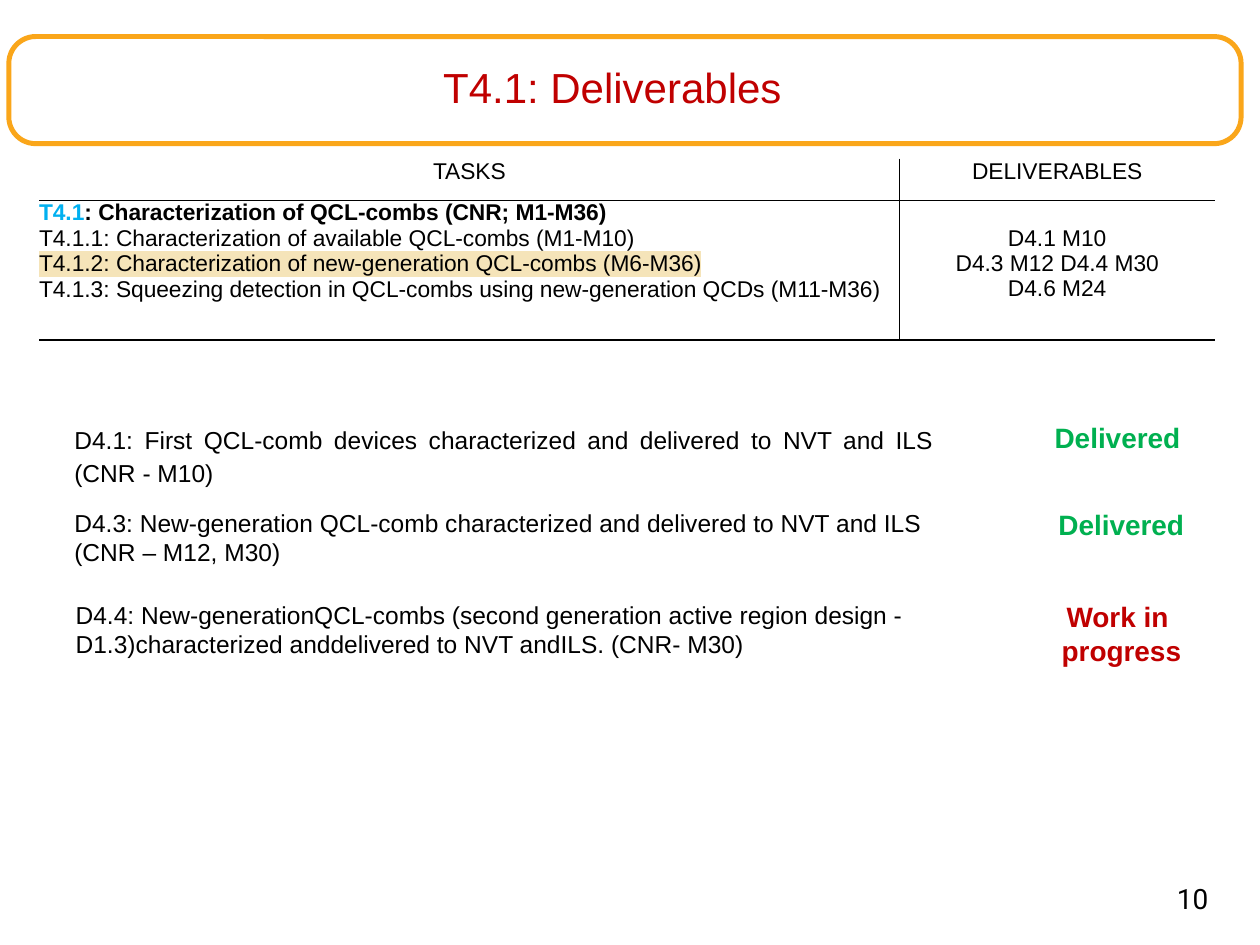
import pptx
import pptx.util
import pptx.dml.color
import pptx.enum.shapes
import pptx.enum.text
import pptx.oxml.ns
from lxml import etree

Inches, Pt = pptx.util.Inches, pptx.util.Pt
RGB = pptx.dml.color.RGBColor
ALIGN = pptx.enum.text.PP_ALIGN
qn = pptx.oxml.ns.qn

BLACK = RGB(0x00, 0x00, 0x00)
RED = RGB(0xC0, 0x00, 0x00)
GREEN = RGB(0x00, 0xB0, 0x50)
BLUE = RGB(0x00, 0xB0, 0xF0)
ORANGE = RGB(0xFA, 0xA6, 0x1A)
SAND = RGB(0xF5, 0xE4, 0xB9)

TITLE = "T4.1: Deliverables"
NUMBER = "10"
HEADS = ["TASKS", "DELIVERABLES"]
TASKS = [
    "T4.1: Characterization of QCL-combs (CNR; M1-M36)",
    "T4.1.1: Characterization of available QCL-combs (M1-M10)",
    "T4.1.2: Characterization of new-generation QCL-combs (M6-M36)",
    "T4.1.3: Squeezing detection in QCL-combs using new-generation QCDs (M11-M36)",
]
DUE = ["D4.1 M10", "D4.3 M12 D4.4 M30", "D4.6 M24"]
COLS = [6.83, 2.5]
ROWS = [0.33, 1.11]
ITEMS = [
    (0.54, 3.29, 0.61, "D4.1: First QCL-comb devices characterized and delivered to NVT and ILS (CNR - M10)",
     ALIGN.JUSTIFY, 1.14),
    (0.54, 3.98, 0.57, "D4.3: New-generation QCL-comb characterized and delivered to NVT and ILS (CNR – M12, M30)",
     ALIGN.LEFT, None),
    (0.55, 4.71, 0.57, "D4.4: New-generationQCL-combs (second generation active region design - "
     "D1.3)characterized anddelivered to NVT andILS. (CNR- M30)", ALIGN.LEFT, None),
]
STATES = [
    (8.32, 3.29, 1.11, 0.37, ["Delivered"], GREEN, ALIGN.LEFT),
    (8.35, 3.98, 1.11, 0.37, ["Delivered"], GREEN, ALIGN.LEFT),
    (8.37, 4.71, 1.06, 0.64, ["Work in ", "progress"], RED, ALIGN.CENTER),
]


def style(run, size, color=BLACK, bold=False, face="Arial"):
    font = run.font
    font.name, font.size, font.bold = face, Pt(size), bold
    font.color.rgb = color


def write(frame, lines, size, color=BLACK, bold=False, face="Arial", align=ALIGN.LEFT, space=None):
    frame.text = "\n".join(lines)
    for para in frame.paragraphs:
        para.alignment = align
        para.line_spacing = space
        for run in para.runs:
            style(run, size, color, bold, face)


def add_text(slide, place, lines, size, pad=0.05, wrap=True, **look):
    box = slide.shapes.add_textbox(*map(Inches, place))
    frame = box.text_frame
    frame.word_wrap = wrap
    frame.margin_left = frame.margin_right = Inches(pad)
    frame.margin_top = frame.margin_bottom = Inches(pad)
    write(frame, lines, size, **look)
    return frame


def mark(run, color):
    fill = run._r.get_or_add_rPr().find(qn("a:solidFill"))
    tint = etree.Element(qn("a:highlight"))
    etree.SubElement(tint, qn("a:srgbClr"), val=str(color))
    fill.addnext(tint)


def rule(cell, sides):
    props = cell._tc.get_or_add_tcPr()
    for side in "LRTB":
        line = etree.SubElement(props, qn("a:ln" + side), w=str(Pt(1)))
        if side in sides:
            fill = etree.SubElement(line, qn("a:solidFill"))
            etree.SubElement(fill, qn("a:srgbClr"), val=str(BLACK))
        else:
            etree.SubElement(line, qn("a:noFill"))
    cell.fill.background()


def add_tasks(slide):
    place = map(Inches, (0.31, 1.26, sum(COLS), sum(ROWS)))
    table = slide.shapes.add_table(len(ROWS), len(COLS), *place).table
    table.first_row = table.horz_banding = False
    for col, width in zip(table.columns, COLS):
        col.width = Inches(width)
    for row, height in zip(table.rows, ROWS):
        row.height = Inches(height)
    body = [[[head] for head in HEADS], [TASKS, DUE]]
    for r, row in enumerate(body):
        for c, lines in enumerate(row):
            cell = table.cell(r, c)
            cell.margin_left = cell.margin_right = 0
            cell.margin_top = cell.margin_bottom = 0
            align = ALIGN.LEFT if lines is TASKS else ALIGN.CENTER
            write(cell.text_frame, lines, 13, align=align)
            rule(cell, ("L" if c else "R") + ("TB" if r else "B"))
    table.cell(1, 1).margin_top = Inches(0.2)
    lead, _, new, _ = table.cell(1, 0).text_frame.paragraphs
    code, rest = TASKS[0].split(":", 1)
    lead.runs[0].text = code
    style(lead.runs[0], 13, BLUE, True)
    tail = lead.add_run()
    tail.text = ":" + rest
    style(tail, 13, BLACK, True)
    mark(new.runs[0], SAND)


def main():
    deck = pptx.Presentation()
    deck.slide_width, deck.slide_height = Inches(10), Inches(7.5)
    slide = deck.slides.add_slide(deck.slide_layouts[6])

    frame = slide.shapes.add_shape(
        pptx.enum.shapes.MSO_SHAPE.ROUNDED_RECTANGLE, *map(Inches, (0.07, 0.29, 9.78, 0.85)))
    frame.adjustments[0] = 0.25
    frame.shadow.inherit = False
    frame.fill.background()
    frame.line.color.rgb = ORANGE
    frame.line.width = Pt(2.83)

    title = add_text(slide, (1.75, 0.53, 6.22, 0.36), [TITLE], 24, pad=0,
                     color=RED, align=ALIGN.CENTER, space=0.9)
    title.vertical_anchor = pptx.enum.text.MSO_ANCHOR.MIDDLE
    add_text(slide, (9.24, 6.95, 0.4, 0.34), [NUMBER], 16, wrap=False,
             face="Roboto", align=ALIGN.RIGHT)

    add_tasks(slide)
    for left, top, height, text, align, space in ITEMS:
        add_text(slide, (left, top, 6.92, height), [text], 14, align=align, space=space)
    for left, top, width, height, lines, color, align in STATES:
        add_text(slide, (left, top, width, height), lines, 16, wrap=False,
                 color=color, bold=True, align=align)
    deck.save("out.pptx")


if __name__ == "__main__":
    main()
